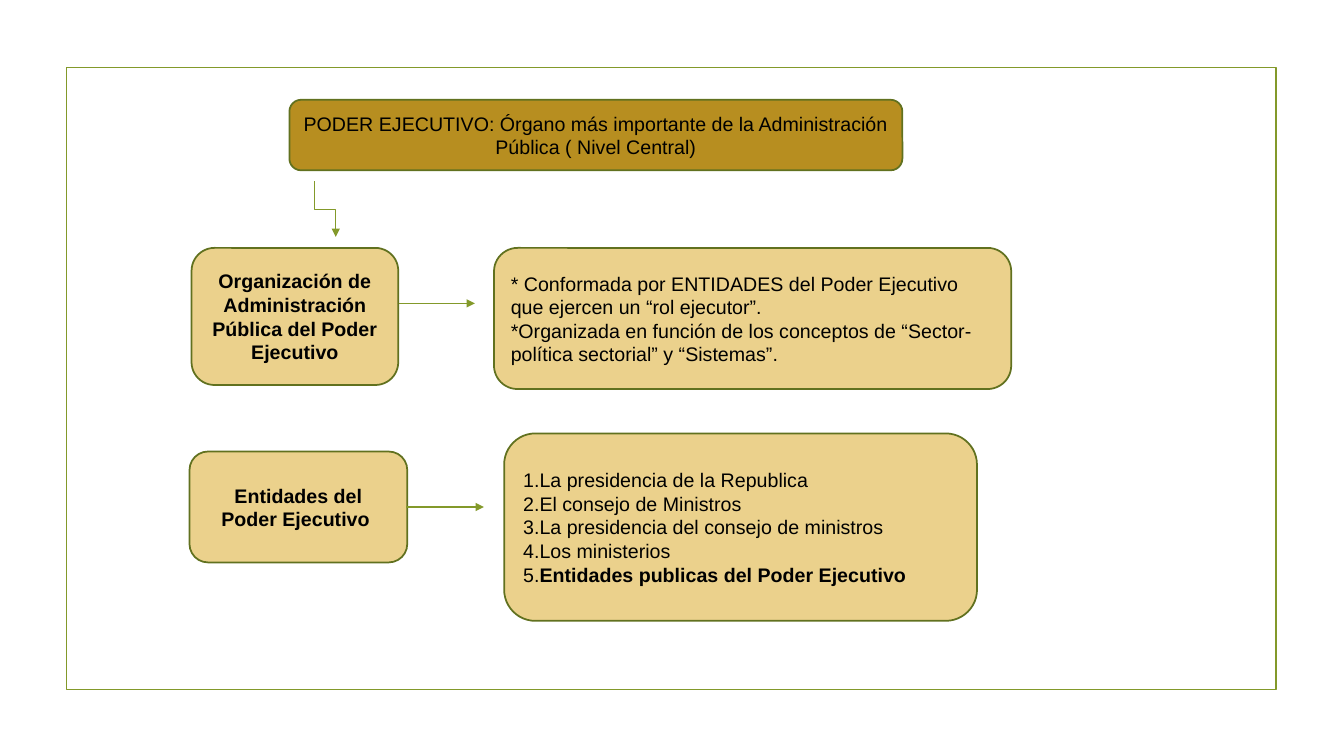
from dataclasses import dataclass

import pptx
import pptx.dml.color
import pptx.enum.shapes
import pptx.enum.text
import pptx.oxml
import pptx.oxml.ns
import pptx.util

Inches = pptx.util.Inches
Shapes = pptx.enum.shapes.MSO_SHAPE
Connectors = pptx.enum.shapes.MSO_CONNECTOR
Align = pptx.enum.text.PP_ALIGN

GOLD, SAND, OLIVE, DARK_OLIVE, BLACK = "B78E20", "EBD18C", "83992A", "61711F", "000000"


@dataclass(frozen=True)
class Span:
    text: str
    bold: bool = False


@dataclass(frozen=True)
class Box:
    left: float
    top: float
    width: float
    height: float
    paras: tuple[tuple[Span, ...], ...]
    kind: Shapes = Shapes.ROUNDED_RECTANGLE
    fill: str = SAND
    align: Align = Align.CENTER


@dataclass(frozen=True)
class Arrow:
    start: tuple[float, float]
    end: tuple[float, float]
    kind: Connectors = Connectors.STRAIGHT
    rotation: int = 0


BOXES = (
    Box(2.87, 0.99, 6.08, 0.7, (
        (Span("PODER EJECUTIVO: Órgano más importante de la Administración "
              "Pública ( Nivel Central)"),),
    ), fill=GOLD),
    Box(1.9, 2.46, 2.05, 1.36, (
        (Span("Organización de Administración Pública del Poder Ejecutivo", True),),
    )),
    Box(4.9, 2.46, 5.13, 1.4, (
        (Span("* Conformada por ENTIDADES del Poder Ejecutivo que ejercen "
              "un “rol ejecutor”."),),
        (Span("*Organizada en función de los conceptos de “Sector-política "
              "sectorial” y “Sistemas”."),),
    ), kind=Shapes.FLOWCHART_ALTERNATE_PROCESS, align=Align.LEFT),
    Box(1.88, 4.48, 2.16, 1.1, (
        (Span("Entidades del Poder Ejecutivo ", True),),
    ), kind=Shapes.FLOWCHART_ALTERNATE_PROCESS),
    Box(5, 4.3, 4.69, 1.86, (
        (Span("1.La presidencia de la Republica"),),
        (Span("2.El consejo de Ministros"),),
        (Span("3.La presidencia del consejo de ministros"),),
        (Span("4.Los ministerios"),),
        (Span("5."), Span("Entidades publicas del Poder Ejecutivo", True)),
    ), align=Align.LEFT),
)

# The elbow is laid out horizontally, then turned to run downwards
ARROWS = (
    Arrow((3.96, 3.01), (4.71, 3.01)),
    Arrow((4.03, 5.03), (4.8, 5.03)),
    Arrow((3.5, 1.97), (2.95, 2.18), Connectors.ELBOW, 270),
)


def color(value: str) -> pptx.dml.color.RGBColor:
    return pptx.dml.color.RGBColor.from_string(value)


def set_line(shape, value: str, width: float) -> None:
    shape.line.color.rgb = color(value)
    shape.line.width = pptx.util.Pt(width)


def draw_frame(page) -> None:
    frame = page.shapes.add_shape(
        Shapes.RECTANGLE, Inches(0.66), Inches(0.67), Inches(12), Inches(6.17))
    frame.shadow.inherit = False
    frame.fill.background()
    set_line(frame, OLIVE, 1.25)


def draw_box(page, box: Box) -> None:
    shape = page.shapes.add_shape(
        box.kind, Inches(box.left), Inches(box.top), Inches(box.width), Inches(box.height))
    shape.shadow.inherit = False
    shape.fill.solid()
    shape.fill.fore_color.rgb = color(box.fill)
    set_line(shape, DARK_OLIVE, 1.25)

    frame = shape.text_frame
    frame.word_wrap = True
    frame.vertical_anchor = pptx.enum.text.MSO_ANCHOR.MIDDLE
    for index, spans in enumerate(box.paras):
        para = frame.add_paragraph() if index else frame.paragraphs[0]
        para.alignment = box.align
        for span in spans:
            run = para.add_run()
            run.text = span.text
            run.font.name = "Arial"
            run.font.size = pptx.util.Pt(14)
            run.font.bold = span.bold
            run.font.color.rgb = color(BLACK)


def draw_arrow(page, arrow: Arrow) -> None:
    line = page.shapes.add_connector(
        arrow.kind, *(Inches(value) for value in arrow.start + arrow.end))
    set_line(line, OLIVE, 0.75)
    properties = line._element.spPr
    if arrow.rotation:
        properties.find(pptx.oxml.ns.qn("a:xfrm")).set("rot", str(arrow.rotation * 60000))
    namespace = pptx.oxml.ns.nsdecls("a")
    line.line._get_or_add_ln().append(
        pptx.oxml.parse_xml(f'<a:tailEnd {namespace} type="triangle"/>'))
    properties.append(pptx.oxml.parse_xml(f"<a:effectLst {namespace}/>"))


def main() -> None:
    deck = pptx.Presentation()
    deck.slide_width, deck.slide_height = Inches(13.33), Inches(7.5)
    page = deck.slides.add_slide(deck.slide_layouts[6])

    # Border, boxes, then the arrows between them
    draw_frame(page)
    for box in BOXES:
        draw_box(page, box)
    for arrow in ARROWS:
        draw_arrow(page, arrow)

    deck.save("out.pptx")


if __name__ == "__main__":
    main()
